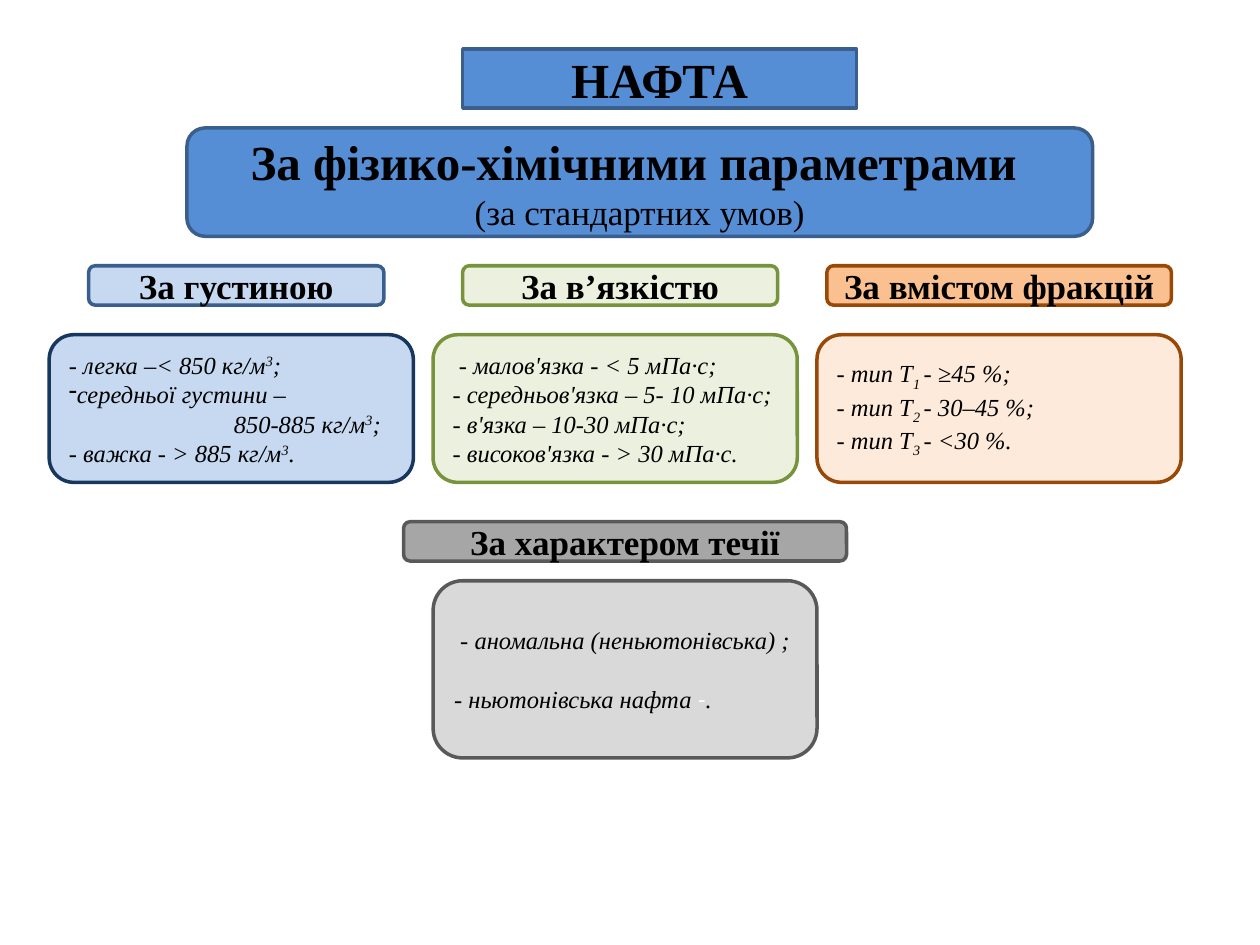
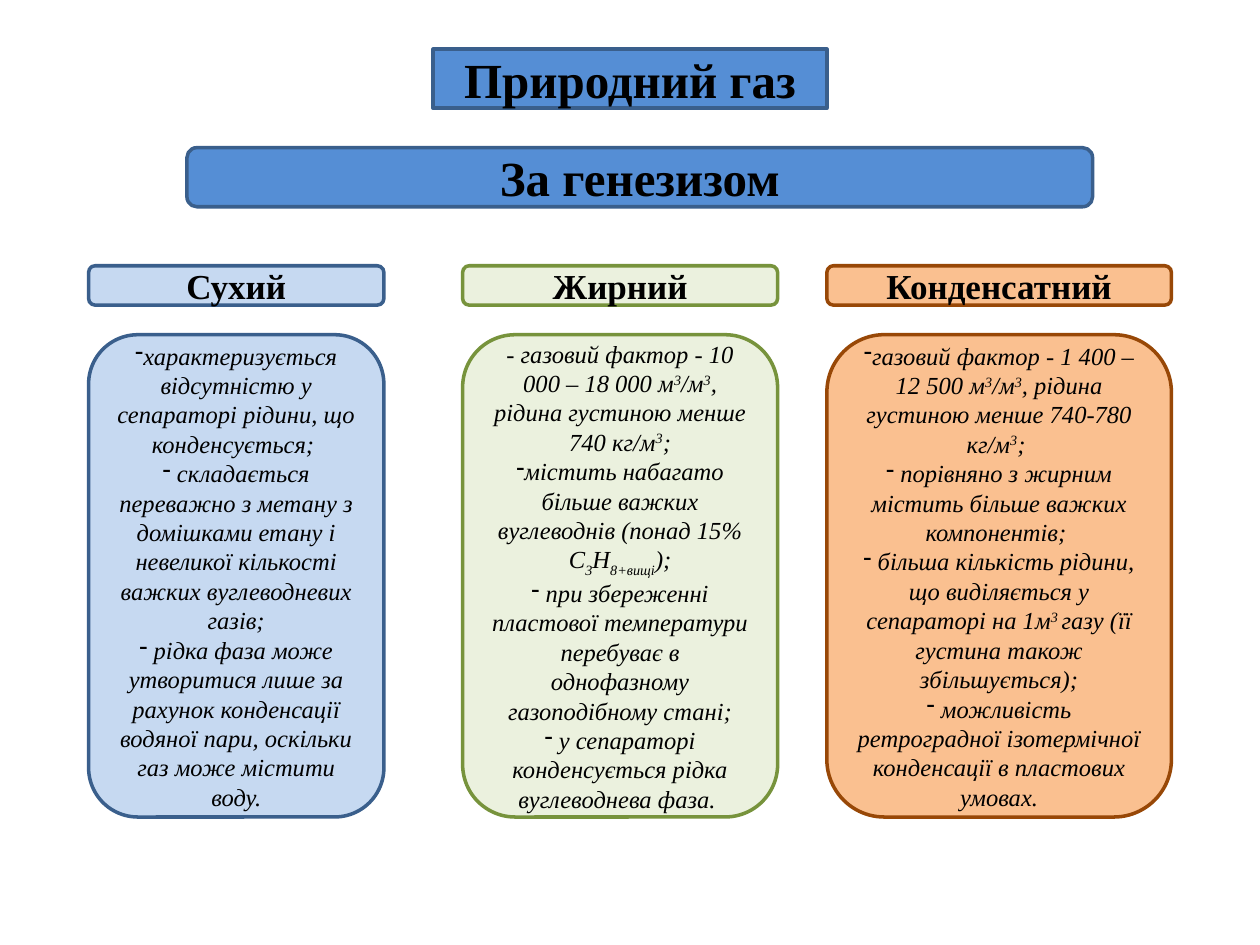
from lxml.etree import SubElement
from pptx import Presentation
from pptx.dml.color import RGBColor
from pptx.enum.shapes import MSO_SHAPE as Shape
from pptx.enum.text import MSO_ANCHOR as Anchor, MSO_AUTO_SIZE as AutoSize, PP_ALIGN as Align
from pptx.oxml.ns import qn
from pptx.util import Inches, Pt

COLUMNS, ROWS = 128, 96
WIDTH, HEIGHT = Inches(10), Inches(7.5)
TITLE_ONLY = 5

COLORS = {
    "black": "000000", "white": "FFFFFF",
    "blue": "558ED5", "blue_line": "3A5F8C", "navy": "17375E", "pale_blue": "C6D9F1",
    "pale_green": "EBF1DE", "green": "77933C",
    "orange": "FAC090", "pale_orange": "FDEADA", "brown": "984807",
    "gray": "A6A6A6", "pale_gray": "D9D9D9", "dark_gray": "595959",
}
HEADING = {"name": "Times New Roman", "size": Pt(28), "bold": True, "italic": False}
SUBHEADING = {**HEADING, "size": Pt(20)}
NOTE = {**SUBHEADING, "bold": False}
LIST = {**NOTE, "size": Pt(14), "italic": True}
FAINT = {**LIST, "name": "Calibri", "italic": False}
BASELINES = {"^": "30000", "_": "-25000"}

TITLE_TOP, TITLE_SIZE = 5, (40, 6)
BANNER_LEFT, BANNER_WIDTH = 19, 92
LABEL_TOP, LABEL_HEIGHT, LIST_TOP = 27, 4, 34
LABEL_COLUMNS = [
    (9, 30, "pale_blue", "blue_line"),
    (47, 32, "pale_green", "green"),
    (84, 35, "orange", "brown"),
]
OIL_COLUMNS = [
    (5, "pale_blue", "navy"),
    (44, "pale_green", "green"),
    (83, "pale_orange", "brown"),
]

OIL_LABELS = ["За густиною", "За в’язкістю", "За вмістом фракцій"]
OIL_LISTS = [
    ["- легка –< 850 кг/м|^3|;", "•середньої густини –",
     "→850-885 кг/м|^3|;", "- важка - > 885 кг/м|^3|."],
    [" - малов'язка - < 5 мПа·с;", "- середньов'язка – 5- 10 мПа·с;",
     "- в'язка – 10-30 мПа·с;", "- високов'язка - > 30 мПа·с."],
    ["- тип Т|_1 |- ≥45 %;", "- тип Т|_2 |- 30–45 %;", "- тип Т|_3 |- <30 %."],
]
FLOW_LIST = [" - аномальна (неньютонівська) ;", "- ньютонівська нафта |~-|."]

GAS_LABELS = ["Сухий", "Жирний", "Конденсатний"]
GAS_LISTS = [
    ["•характеризується відсутністю у сепараторі рідини, що конденсується; ",
     "• складається переважно з метану з домішками етану і невеликої кількості "
     "важких вуглеводневих газів;",
     "• рідка фаза може утворитися лише за рахунок конденсації водяної пари, "
     "оскільки газ може містити воду."],
    ["- газовий фактор - 10 000 – 18 000 м|^3|/м|^3|, рідина густиною менше 740 кг/м|^3|;",
     "•містить набагато більше важких вуглеводнів (понад 15% С|_3|Н|_8+вищі|);",
     "• при збереженні пластової температури перебуває в однофазному газоподібному стані;",
     "• у сепараторі конденсується рідка вуглеводнева фаза. "],
    ["•газовий фактор - 1 400 – 12 500 м|^3|/м|^3|, рідина густиною менше 740-780 кг/м|^3|; ",
     "• порівняно з жирним містить більше важких компонентів; ",
     "• більша кількість рідини, що виділяється у сепараторі на 1м|^3 |газу "
     "(її густина також збільшується);",
     "• можливість ретроградної ізотермічної конденсації в пластових умовах."],
]


def rgb(name):
    return RGBColor.from_string(COLORS[name])


def grid(left, top, width, height):
    return (WIDTH * left // COLUMNS, HEIGHT * top // ROWS,
            WIDTH * width // COLUMNS, HEIGHT * height // ROWS)


def style_box(shape, fill, line):
    shape.fill.solid()
    shape.fill.fore_color.rgb = rgb(fill)
    shape.line.color.rgb = rgb(line)
    shape.line.width = Pt(2)
    frame = shape.text_frame
    for name, value in {"word_wrap": True, "auto_size": AutoSize.NONE,
                        "vertical_anchor": Anchor.MIDDLE}.items():
        setattr(frame, name, value)


def add_box(slide, place, fill, line):
    shape = slide.shapes.add_shape(Shape.ROUNDED_RECTANGLE, *grid(*place))
    shape.shadow.inherit = False
    style_box(shape, fill, line)
    return shape


def add_run(paragraph, text, formats, color="black"):
    run = paragraph.add_run()
    run.text = text
    for name, value in formats.items():
        setattr(run.font, name, value)
    run.font.color.rgb = rgb(color)
    return run


def write_line(shape, text, formats, align=Align.CENTER, first=True):
    frame = shape.text_frame
    paragraph = frame.paragraphs[0] if first else frame.add_paragraph()
    paragraph.alignment = align
    properties = paragraph._p.get_or_add_pPr()
    if text.startswith("•"):
        properties.set("marL", "0")
        properties.set("indent", "0")
        SubElement(properties, qn("a:buFontTx"))
        SubElement(properties, qn("a:buChar")).set("char", "-")
    elif text.startswith("→"):
        properties.set("marL", str(Inches(1.31)))
    for piece in text.lstrip("•→").split("|"):
        mark, rest = piece[:1], piece[1:]
        if mark in BASELINES:
            run = add_run(paragraph, rest, formats)
            run._r.get_or_add_rPr().set("baseline", BASELINES[mark])
        elif mark == "~":
            add_run(paragraph, rest, FAINT, "white")
        else:
            add_run(paragraph, piece, formats)
    return paragraph


def add_title(slide, text, left):
    title = slide.shapes.title
    places = grid(left, TITLE_TOP, *TITLE_SIZE)
    for name, value in zip(("left", "top", "width", "height"), places):
        setattr(title, name, value)
    geometry = SubElement(title._element.spPr, qn("a:prstGeom"))
    geometry.set("prst", "roundRect")
    SubElement(geometry, qn("a:avLst"))
    style_box(title, "blue", "blue_line")
    write_line(title, text, HEADING)


def add_banner(slide, text, top, height):
    banner = add_box(slide, (BANNER_LEFT, top, BANNER_WIDTH, height), "blue", "blue_line")
    write_line(banner, text, HEADING)
    return banner


def add_label(slide, text, left, top, width, fill, line):
    label = add_box(slide, (left, top, width, LABEL_HEIGHT), fill, line)
    write_line(label, text, SUBHEADING)


def add_labels(slide, texts):
    for text, (left, width, fill, line) in zip(texts, LABEL_COLUMNS):
        add_label(slide, text, left, LABEL_TOP, width, fill, line)


def add_list(slide, items, place, fill, line, align=Align.LEFT, gap=0):
    box = add_box(slide, place, fill, line)
    for index, item in enumerate(items):
        paragraph = write_line(box, item, LIST, align, index == 0)
        if index:
            paragraph.space_before = Pt(gap)


def add_slide(presentation, title, title_left):
    slide = presentation.slides.add_slide(presentation.slide_layouts[TITLE_ONLY])
    add_title(slide, title, title_left)
    return slide


def build_oil(presentation):
    slide = add_slide(presentation, "НАФТА", 47)
    banner = add_banner(slide, "За фізико-хімічними параметрами ", 13, 11)
    write_line(banner, "(за стандартних умов)", NOTE, first=False)
    add_labels(slide, OIL_LABELS)
    for items, (left, fill, line) in zip(OIL_LISTS, OIL_COLUMNS):
        add_list(slide, items, (left, LIST_TOP, 37, 15), fill, line)
    add_label(slide, "За характером течії", 41, 53, 45, "gray", "dark_gray")
    add_list(slide, FLOW_LIST, (44, 59, 39, 18), "pale_gray", "dark_gray", gap=16.75)


def build_gas(presentation):
    slide = add_slide(presentation, "Природний газ", 44)
    add_banner(slide, "За генезизом", 15, 6)
    add_labels(slide, GAS_LABELS)
    for items, (left, width, fill, line) in zip(GAS_LISTS, LABEL_COLUMNS):
        add_list(slide, items, (left, LIST_TOP, width, 49), fill, line, Align.CENTER)


def main():
    presentation = Presentation()
    presentation.slide_width, presentation.slide_height = WIDTH, HEIGHT
    build_oil(presentation)
    build_gas(presentation)
    presentation.save("out.pptx")


if __name__ == "__main__":
    main()
